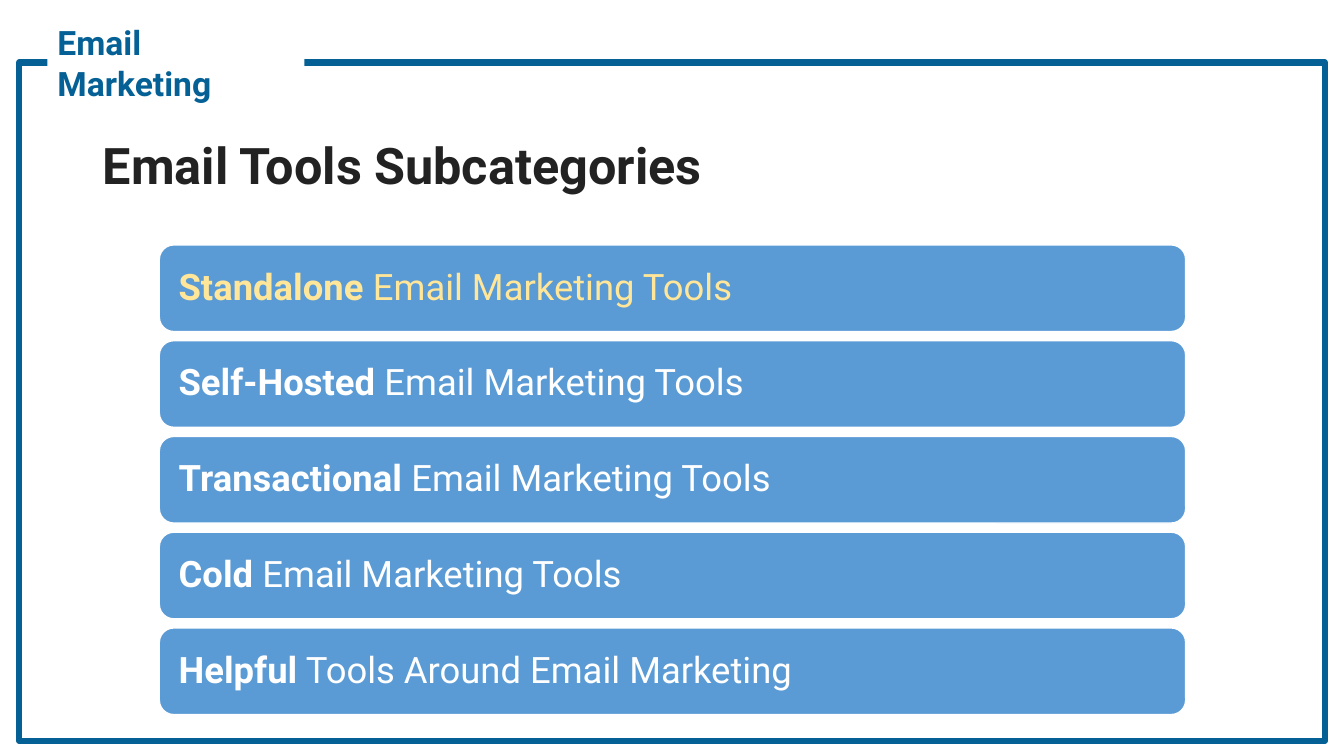
from lxml import etree
from pptx import Presentation
from pptx.dml.color import RGBColor
from pptx.enum import shapes, text
from pptx.oxml import ns
from pptx.util import Inches, Pt

NAVY = RGBColor(0x05, 0x61, 0x95)
BLUE = RGBColor(0x5B, 0x9B, 0xD5)
YELLOW = RGBColor(0xFF, 0xE6, 0x99)
WHITE = RGBColor(0xFF, 0xFF, 0xFF)
INK = RGBColor(0x22, 0x22, 0x22)

FONT = "Roboto"
BAR_TOP, BAR_PITCH = 2.43, 0.95
SUBCATEGORIES = [
    ("Standalone", " Email Marketing Tools", YELLOW),
    ("Self-Hosted", " Email Marketing Tools", WHITE),
    ("Transactional", " Email Marketing Tools", WHITE),
    ("Cold", " Email Marketing Tools", WHITE),
    ("Helpful", " Tools Around Email Marketing", WHITE),
]


def apply(target, formats):
    for name, value in formats.items():
        setattr(target, name, value)


def place(shape, left, top, width, height):
    box = {"left": left, "top": top, "width": width, "height": height}
    apply(shape, {name: Inches(value) for name, value in box.items()})


def add_run(paragraph, wording, size, color, bold=True):
    run = paragraph.add_run()
    run.text = wording
    apply(run.font, {"name": FONT, "size": Pt(size), "bold": bold})
    run.font.color.rgb = color


def format_frame(frame, inset):
    apply(frame, {
        "word_wrap": True,
        "auto_size": text.MSO_AUTO_SIZE.NONE,
        "vertical_anchor": text.MSO_ANCHOR.MIDDLE,
        "margin_left": Inches(inset),
        "margin_right": Inches(inset),
    })
    paragraph = frame.paragraphs[0]
    apply(paragraph, {"alignment": text.PP_ALIGN.LEFT, "space_before": Pt(0)})
    return paragraph


def add_box(slide, kind, box, line_color, line_width):
    shape = slide.shapes.add_shape(kind, *map(Inches, box))
    shape.shadow.inherit = False
    shape.line.color.rgb = line_color
    shape.line.width = Pt(line_width)
    return shape


def add_border(slide):
    border = add_box(slide, shapes.MSO_SHAPE.RECTANGLE,
                     (0.19, 0.62, 12.95, 6.73), NAVY, 4.5)
    border.fill.background()


def add_bar(slide, top, lead, rest, color):
    bar = add_box(slide, shapes.MSO_SHAPE.ROUNDED_RECTANGLE,
                  (1.58, top, 10.18, 0.86), WHITE, 1)
    bar.fill.solid()
    bar.fill.fore_color.rgb = BLUE
    paragraph = format_frame(bar.text_frame, 0.15)
    paragraph.line_spacing = 0.9
    add_run(paragraph, lead, 26, color)
    add_run(paragraph, rest, 26, color, bold=False)


def fill_title(title):
    place(title, 0.92, 1.26, 11.5, 0.81)
    paragraph = format_frame(title.text_frame, 0.1)
    paragraph.line_spacing = 0.9
    add_run(paragraph, "Email Tools Subcategories", 36, INK)


def fill_label(label):
    place(label, 0.47, 0.32, 2.55, 0.6)
    label.fill.solid()
    label.fill.fore_color.rgb = WHITE
    paragraph = format_frame(label.text_frame, 0.1)
    # No bullet and no hanging indent
    properties = paragraph._p.get_or_add_pPr()
    properties.set("marL", "0")
    properties.set("indent", "0")
    etree.SubElement(properties, ns.qn("a:buNone"))
    add_run(paragraph, "Email Marketing", 24, NAVY)
    # Bring the label in front of the border it interrupts
    label.element.getparent().append(label.element)


def main():
    presentation = Presentation()
    presentation.slide_width = Inches(13.33)
    presentation.slide_height = Inches(7.5)
    slide = presentation.slides.add_slide(presentation.slide_layouts[1])

    # Border and heading
    add_border(slide)
    fill_title(slide.shapes.title)

    # Subcategory bars
    for index, subcategory in enumerate(SUBCATEGORIES):
        add_bar(slide, BAR_TOP + index * BAR_PITCH, *subcategory)

    # Section label
    fill_label(slide.placeholders[1])

    presentation.save("out.pptx")


if __name__ == "__main__":
    main()
